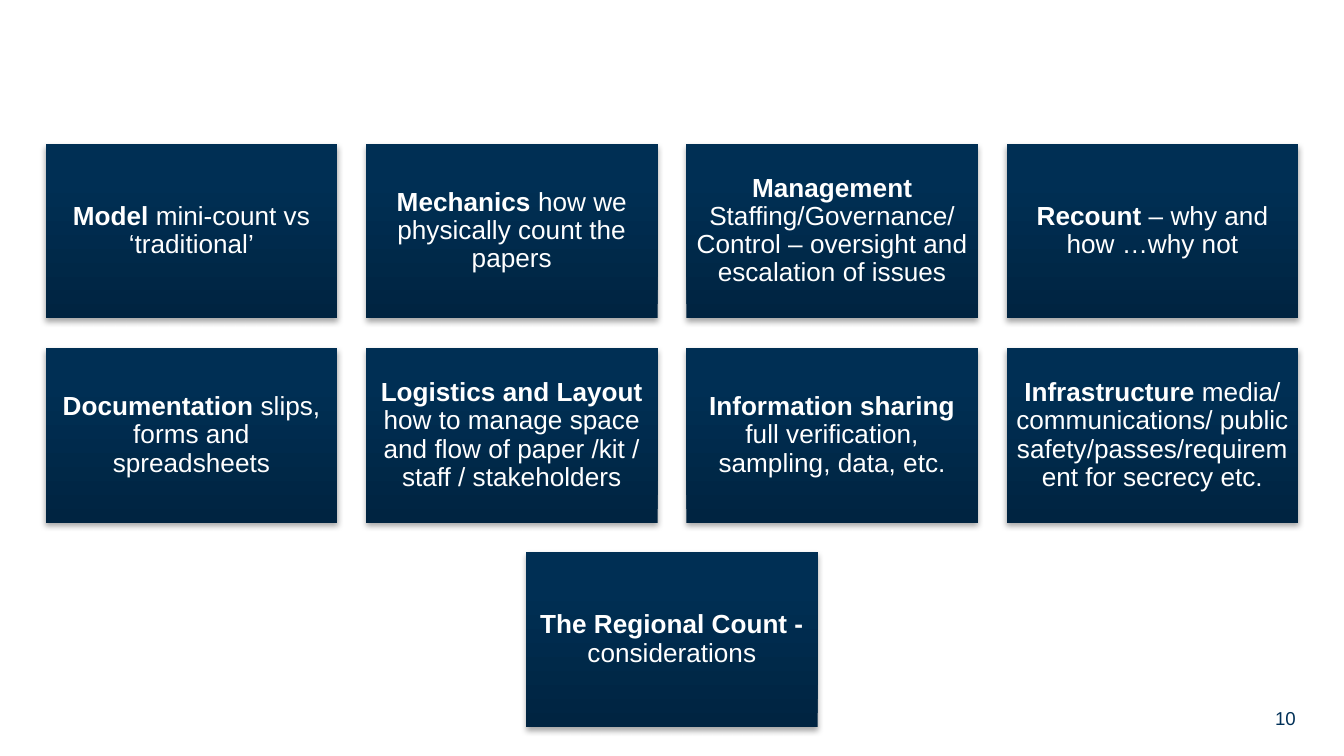
import pptx
import pptx.util
import pptx.dml.color
import pptx.enum.shapes
import pptx.enum.text
import pptx.oxml
import pptx.oxml.ns
from pptx.util import Inches

COLORS = {
    "navy": "003057",
    "card_bottom": "002441",
    "card_middle": "002F54",
    "card_top": "002F55",
    "shadow": "000000",
    "white": "FFFFFF",
}
FONT = "Arial"
CARD_WIDTH, CARD_HEIGHT = 2.17, 1.3
CARD_ROWS = [
    [
        ("Model", " mini-count vs ‘traditional’"),
        ("Mechanics", " how we physically count the papers"),
        ("Management ", "Staffing/Governance/ Control – oversight and escalation of issues"),
        ("Recount", " – why and how …why not"),
    ],
    [
        ("Documentation", " slips, forms and spreadsheets"),
        ("Logistics and Layout", " how to manage space and flow of paper /kit / staff / stakeholders"),
        ("Information sharing", " full verification, sampling, data, etc."),
        ("Infrastructure", " media/ communications/ public safety/passes/requirement for secrecy etc."),
    ],
    [("The Regional Count - ", "considerations")],
]


def rgb(name):
    return pptx.dml.color.RGBColor.from_string(COLORS[name])


def set_font(para, size, color):
    para.font.name = FONT
    para.font.size = pptx.util.Pt(size)
    para.font.color.rgb = rgb(color)


def set_margins(frame, margin):
    frame.margin_left = frame.margin_right = Inches(margin)
    frame.margin_top = frame.margin_bottom = Inches(margin)


def style_card(card):
    card.fill.background()
    card.line.fill.background()
    card.shadow.inherit = False
    namespace = pptx.oxml.ns.nsdecls("a")
    stops = [(0, "card_bottom"), (80, "card_middle"), (100, "card_top")]
    stop_xml = "".join(
        f'<a:gs pos="{position * 1000}"><a:srgbClr val="{COLORS[name]}"/></a:gs>'
        for position, name in stops
    )
    gradient = pptx.oxml.parse_xml(
        f'<a:gradFill {namespace} rotWithShape="1"><a:gsLst>{stop_xml}</a:gsLst>'
        '<a:lin ang="16200000" scaled="0"/></a:gradFill>'
    )
    shadow = pptx.oxml.parse_xml(
        f'<a:outerShdw {namespace} blurRad="40000" dist="23000" dir="5400000" rotWithShape="0">'
        f'<a:srgbClr val="{COLORS["shadow"]}"><a:alpha val="35000"/></a:srgbClr></a:outerShdw>'
    )
    properties = card._element.spPr
    properties.replace(properties.find(pptx.oxml.ns.qn("a:noFill")), gradient)
    properties.find(pptx.oxml.ns.qn("a:effectLst")).append(shadow)


def add_card(page, left, top, heading, detail):
    card = page.shapes.add_shape(
        pptx.enum.shapes.MSO_SHAPE.RECTANGLE,
        Inches(left), Inches(top), Inches(CARD_WIDTH), Inches(CARD_HEIGHT),
    )
    style_card(card)
    frame = card.text_frame
    frame.word_wrap = True
    frame.vertical_anchor = pptx.enum.text.MSO_ANCHOR.MIDDLE
    set_margins(frame, 0.06)
    para = frame.paragraphs[0]
    para.alignment = pptx.enum.text.PP_ALIGN.CENTER
    para.line_spacing = 0.9
    set_font(para, 14, "white")
    for text, bold in ((heading, True), (detail, False)):
        span = para.add_run()
        span.text = text
        span.font.bold = bold


def add_card_grid(page, left, top, width, height):
    columns = max(len(row) for row in CARD_ROWS)
    column_step = (width - CARD_WIDTH) / (columns - 1)
    row_step = (height - CARD_HEIGHT) / (len(CARD_ROWS) - 1)
    for row_index, row in enumerate(CARD_ROWS):
        row_left = left + (columns - len(row)) * column_step / 2
        for column, (heading, detail) in enumerate(row):
            add_card(page, row_left + column * column_step,
                     top + row_index * row_step, heading, detail)


def add_page_number(page, left, top, width, height, number):
    box = page.shapes.add_textbox(Inches(left), Inches(top), Inches(width), Inches(height))
    frame = box.text_frame
    frame.word_wrap = True
    set_margins(frame, 0)
    para = frame.paragraphs[0]
    para.text = number
    para.alignment = pptx.enum.text.PP_ALIGN.RIGHT
    set_font(para, 10, "navy")


def main():
    deck = pptx.Presentation()
    deck.slide_width = Inches(10)
    deck.slide_height = deck.slide_width * 9 // 16
    page = deck.slides.add_slide(deck.slide_layouts[6])
    add_page_number(page, 8.89, 5.26, 0.75, 0.17, "10")
    add_card_grid(page, 0.34, 1.07, 9.32, 4.34)
    deck.save("out.pptx")


if __name__ == "__main__":
    main()
